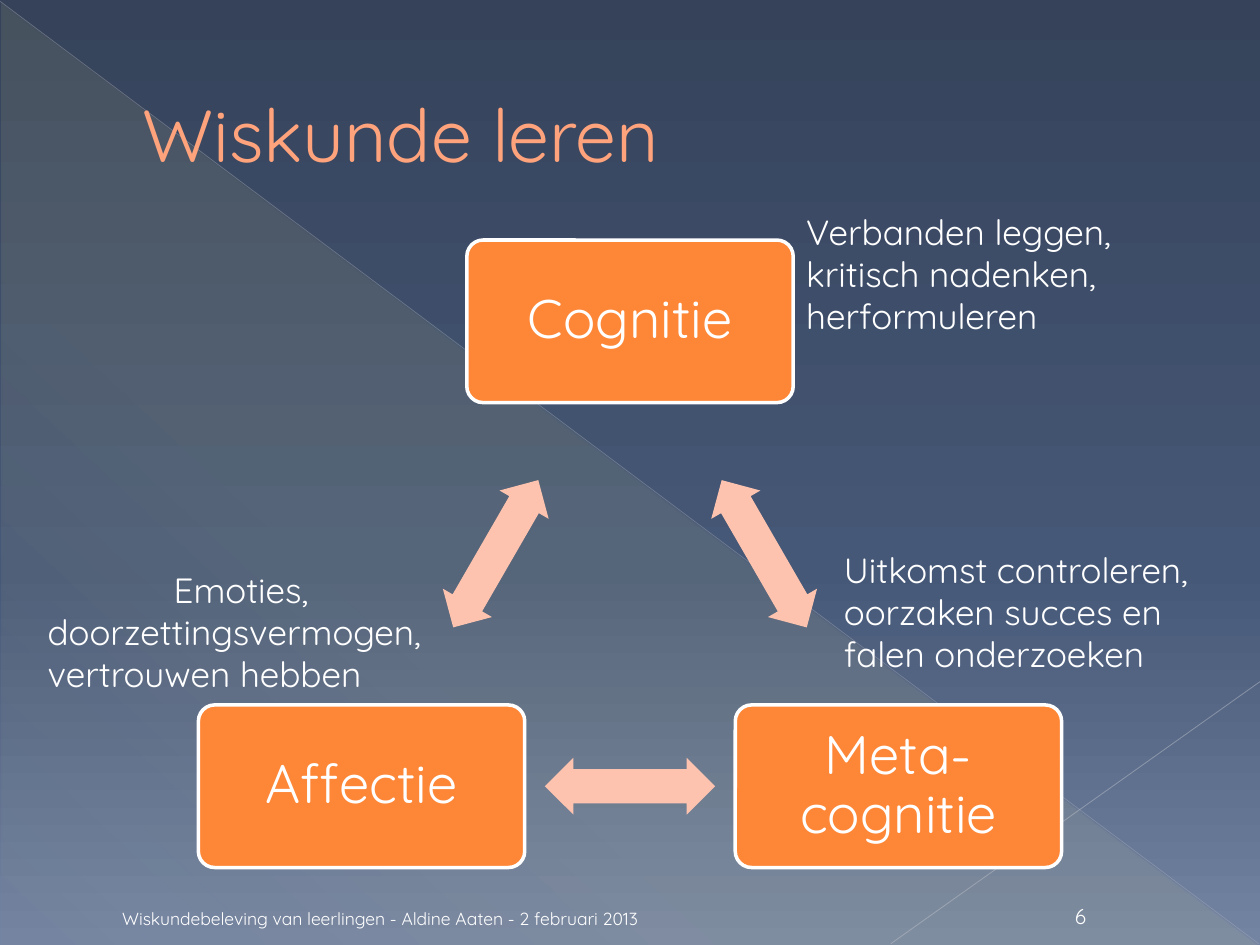
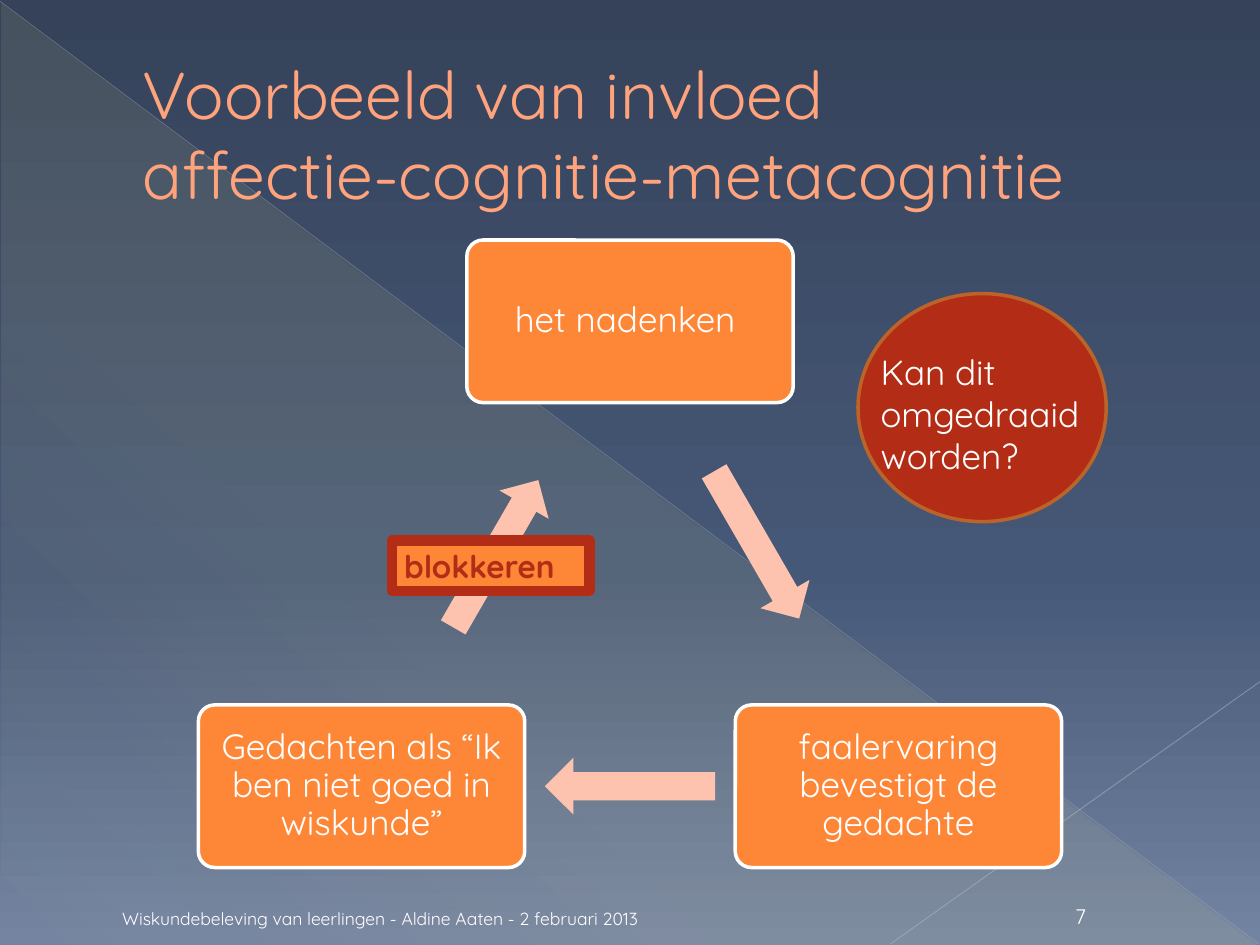
from math import atan2, cos, degrees, radians, sin

from lxml.etree import SubElement
from pptx import Presentation
from pptx.dml.color import RGBColor
from pptx.enum.shapes import MSO_CONNECTOR, MSO_SHAPE
from pptx.enum.text import MSO_ANCHOR, MSO_AUTO_SIZE, PP_ALIGN
from pptx.oxml.ns import qn
from pptx.util import Inches, Pt

FONT = "Quicksand"
FOOTER = "Wiskundebeleving van leerlingen - Aldine Aaten - 2 februari 2013"
COLORS = {
    "title": "FFA37C", "title_outline": "B05D26", "text": "FFFFFF",
    "node": "FE8637", "arrow": "FEC3AE", "red": "B32C16", "ellipse_line": "BC6329",
    "diagonal": "BABDC4", "corner": "C1C4CA",
}
BACKGROUND = [(0, "35425A", 100), (60, "465877", 100), (100, "7383A2", 100)]
GLOW = [(0, "FFF39D", 10), (70, "FFF39D", 8), (100, "FFF39D", 1)]
DECOR_LINES = [
    ((0, 0.01), (9.99, 7.49), "diagonal", 0.39, 35),
    ((10, 5.41), (7.07, 7.49), "corner", 0.47, 45),
]

CENTER, RADIUS = (5, 5.01), 2.46
NODE_SIZE, ARROW_SIZE = (2.59, 1.29), (1.35, 0.45)

SLIDES = [
    {
        "title": "Wiskunde leren", "title_size": 42, "number": "6",
        "nodes": ["Cognitie", "Meta-cognitie", "Affectie"],
        "node_size": 31, "node_inset": 0.13,
        "arrow": MSO_SHAPE.LEFT_RIGHT_ARROW, "arrow_adjustments": (0.6, 0.5),
        "arrow_shifts": [(0, 0), (0, 0), (0, 0)],
        "notes": [
            ((6.3, 1.62, 2.95, 1.11), "Verbanden leggen,\nkritisch nadenken, herformuleren", 0),
            ((6.6, 4.3, 3.24, 1.11), "Uitkomst controleren, oorzaken succes en falen onderzoeken", 0),
            ((0.28, 4.46, 3.46, 1.11), "Emoties,\ndoorzettingsvermogen, vertrouwen hebben", 1),
        ],
    },
    {
        "title": "Voorbeeld van invloed \vaffectie-cognitie-metacognitie",
        "title_size": 37.8, "number": "7",
        "nodes": ["het nadenken ", "faalervaring bevestigt de gedachte",
                  "Gedachten als “Ik ben niet goed in wiskunde”"],
        "node_size": 20, "node_inset": 0.08,
        "arrow": MSO_SHAPE.RIGHT_ARROW, "arrow_adjustments": (0.5, 0.5),
        "arrow_shifts": [(-0.06, -0.07), (0, 0), (0, 0)],
        "notes": [((6.89, 2.73, 1.97, 1.11), "Kan dit omgedraaid worden?", 0)],
    },
]


def color(name):
    return RGBColor.from_string(COLORS[name])


def inches(values):
    return [Inches(value) for value in values]


def add_alpha(color_element, percent):
    SubElement(color_element, qn("a:alpha"), val=str(percent * 1000))


def set_gradient(fill, holder, stops, angle):
    fill.gradient()
    gradient = holder.find(".//" + qn("a:gradFill"))
    for child in list(gradient):
        gradient.remove(child)
    stop_list = SubElement(gradient, qn("a:gsLst"))
    for position, value, alpha in stops:
        stop = SubElement(stop_list, qn("a:gs"), pos=str(position * 1000))
        add_alpha(SubElement(stop, qn("a:srgbClr"), val=value), alpha)
    SubElement(gradient, qn("a:lin"), ang=str(angle * 60000), scaled="0")


def add_shape(page, kind, bounds, fill=None, line=None, line_width=2):
    shape = page.shapes.add_shape(kind, *inches(bounds))
    shape.shadow.inherit = False
    if fill:
        shape.fill.solid()
        shape.fill.fore_color.rgb = color(fill)
    if line:
        shape.line.color.rgb = color(line)
        shape.line.width = Pt(line_width)
    else:
        shape.line.fill.background()
    return shape


def write(shape, text, size, ink="text", align=PP_ALIGN.LEFT, anchor=MSO_ANCHOR.TOP, bold=False):
    frame = shape.text_frame
    frame.word_wrap = True
    frame.auto_size = MSO_AUTO_SIZE.NONE
    frame.vertical_anchor = anchor
    frame.text = text
    for para in frame.paragraphs:
        para.alignment = align
        for span in para.runs:
            span.font.name = FONT
            span.font.size = Pt(size)
            span.font.bold = bold
            span.font.color.rgb = color(ink)
    return frame


def add_text(page, bounds, text, size, **style):
    return write(page.shapes.add_textbox(*inches(bounds)), text, size, **style)


def decorate_layout(layout, page):
    set_gradient(layout.background.fill, layout.element, BACKGROUND, 90)
    for placeholder in list(layout.placeholders):
        if placeholder.placeholder_format.idx >= 10:
            layout.shapes.element.remove(placeholder.element)
    triangle = add_shape(page, MSO_SHAPE.RIGHT_TRIANGLE, (0.01, 0.02, 9.98, 7.48))
    set_gradient(triangle.fill, triangle.element, GLOW, 133)
    decor = [triangle]
    for start, end, name, width, alpha in DECOR_LINES:
        line = page.shapes.add_connector(MSO_CONNECTOR.STRAIGHT, *inches(start + end))
        line.line.color.rgb = color(name)
        line.line.width = Pt(width)
        add_alpha(line.element.find(".//" + qn("a:srgbClr")), alpha)
        SubElement(line.element.spPr, qn("a:effectLst"))
        decor.append(line)
    for shape in decor:
        layout.shapes.element.append(shape.element)


def add_title(page, text, size):
    title = page.shapes.title
    title.left, title.top, title.width, title.height = inches((0.5, 0.29, 9, 1.53))
    frame = write(title, text, size, ink="title", anchor=MSO_ANCHOR.MIDDLE)
    properties = frame.paragraphs[0]._p.get_or_add_pPr()
    properties.set("marL", str(Inches(0.53)))
    properties.set("indent", "0")
    for span in frame.paragraphs[0].runs:
        run_properties = span._r.get_or_add_rPr()
        outline = SubElement(run_properties, qn("a:ln"), w=str(Pt(0.5)))
        fill = SubElement(outline, qn("a:solidFill"))
        SubElement(fill, qn("a:srgbClr"), val=COLORS["title_outline"])
        run_properties.insert(0, outline)


def centered(point, size):
    return (point[0] - size[0] / 2, point[1] - size[1] / 2, *size)


def add_cycle(page, content):
    points = [(CENTER[0] + RADIUS * cos(radians(angle)), CENTER[1] + RADIUS * sin(radians(angle)))
              for angle in (-90, 30, 150)]
    for point, label in zip(points, content["nodes"]):
        node = add_shape(page, MSO_SHAPE.ROUNDED_RECTANGLE, centered(point, NODE_SIZE), "node", "text")
        node.adjustments[0] = 0.1
        frame = write(node, label, content["node_size"], align=PP_ALIGN.CENTER, anchor=MSO_ANCHOR.MIDDLE)
        frame.paragraphs[0].line_spacing = 0.9
        inset = Inches(content["node_inset"])
        frame.margin_left = frame.margin_right = frame.margin_top = frame.margin_bottom = inset
    for start, end, shift in zip(points, points[1:] + points[:1], content["arrow_shifts"]):
        middle = [(a + b) / 2 + move for a, b, move in zip(start, end, shift)]
        arrow = add_shape(page, content["arrow"], centered(middle, ARROW_SIZE), "arrow")
        arrow.rotation = round(degrees(atan2(end[1] - start[1], end[0] - start[0]))) % 360
        for index, value in enumerate(content["arrow_adjustments"]):
            arrow.adjustments[index] = value


def add_question_parts(page):
    add_shape(page, MSO_SHAPE.OVAL, (6.81, 2.33, 1.97, 1.81), "red", "ellipse_line")
    block = add_shape(page, MSO_SHAPE.RECTANGLE, (3.11, 4.29, 1.57, 0.4), "node", "red", 6)
    write(block, "blokkeren", 18, ink="red", bold=True)


def add_notes(page, notes):
    for bounds, text, first_indent in notes:
        frame = add_text(page, bounds, text, 20)
        if first_indent:
            frame.paragraphs[0]._p.get_or_add_pPr().set("indent", str(Inches(first_indent)))


def add_footer(page, number):
    add_text(page, (0.5, 7.09, 4.66, 0.33), FOOTER, 10, align=PP_ALIGN.RIGHT, anchor=MSO_ANCHOR.BOTTOM)
    add_text(page, (8.3, 7.09, 0.55, 0.33), number, 12, align=PP_ALIGN.CENTER, anchor=MSO_ANCHOR.BOTTOM)


def main():
    deck = Presentation()
    deck.slide_width, deck.slide_height = Inches(10), Inches(7.5)
    layout = deck.slide_layouts.get_by_name("Title Only")
    pages = [deck.slides.add_slide(layout) for _ in SLIDES]
    decorate_layout(layout, pages[0])
    for page, content in zip(pages, SLIDES):
        add_title(page, content["title"], content["title_size"])
        add_cycle(page, content)
        if page is pages[1]:
            add_question_parts(page)
        add_notes(page, content["notes"])
        add_footer(page, content["number"])
    deck.save("out.pptx")


if __name__ == "__main__":
    main()
